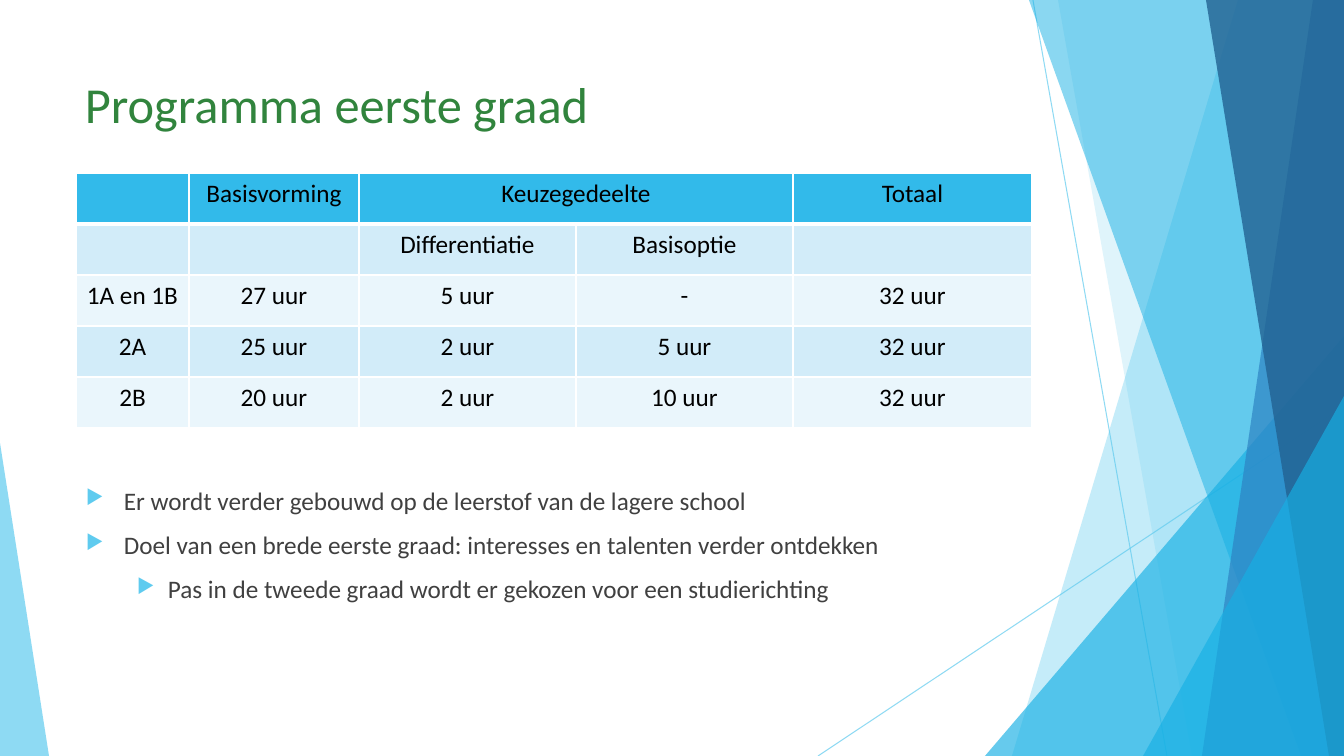
from dataclasses import dataclass

from lxml import etree
from pptx import Presentation
from pptx.dml.color import RGBColor
from pptx.enum.shapes import MSO_CONNECTOR, MSO_SHAPE
from pptx.enum.text import MSO_ANCHOR, PP_ALIGN
from pptx.oxml.ns import qn
from pptx.util import Emu, Pt

STRAIGHT = MSO_CONNECTOR.STRAIGHT
TRIANGLE = MSO_SHAPE.ISOSCELES_TRIANGLE
LEFT, CENTER = PP_ALIGN.LEFT, PP_ALIGN.CENTER
TOP = MSO_ANCHOR.TOP

EMU_PER_PX = 914400 / 100.8
WIDTH, HEIGHT = 1344, 756


@dataclass(frozen=True)
class Theme:
    font: str = "Calibri"
    title_size: int = 36
    text_size: int = 18
    title: str = "31843D"
    body: str = "404040"
    cell: str = "000000"
    sky: str = "5FCBEF"
    cyan: str = "17B0E4"
    blue: str = "2E83C3"
    navy: str = "226292"
    header: str = "32BAEA"
    bands: tuple[str, str] = ("D2ECF9", "EAF6FC")
    border: str = "FFFFFF"


THEME = Theme()


@dataclass(frozen=True)
class Ray:
    start: tuple[int, int]
    end: tuple[int, int]


@dataclass(frozen=True)
class Facet:
    top_left: int
    bottom_left: int
    color: str
    alpha: int


@dataclass(frozen=True)
class Wedge:
    left: int
    top: int
    width: int
    apex: int
    color: str
    alpha: int


@dataclass(frozen=True)
class Bullet:
    text: str
    level: int
    margin: int
    hanging: int


DECOR = [
    Ray((1033, 0), (1167, HEIGHT)),
    Ray((WIDTH, 406), (818, HEIGHT)),
    Facet(1238, 1012, THEME.sky, 36),
    Facet(1058, 1192, THEME.sky, 20),
    Wedge(985, 336, 359, 1, THEME.cyan, 66),
    Facet(1029, 1301, THEME.cyan, 50),
    Facet(1313, 1202, THEME.blue, 70),
    Facet(1206, 1329, THEME.navy, 80),
    Wedge(1143, 396, 201, 1, THEME.cyan, 66),
    Wedge(0, 443, 49, 0, THEME.sky, 70),
]

COLUMN_WIDTHS = [113, 170, 217, 217, 239]
ROW_HEIGHT = 51
HOURS = [
    ["", "Basisvorming", "Keuzegedeelte", "", "Totaal"],
    ["", "", "Differentiatie", "Basisoptie", ""],
    ["1A en 1B", "27 uur", "5 uur", "-", "32 uur"],
    ["2A", "25 uur", "2 uur", "5 uur", "32 uur"],
    ["2B", "20 uur", "2 uur", "10 uur", "32 uur"],
]

BULLETS = [
    Bullet("Er wordt verder gebouwd op de leerstof van de lagere school", 0, 38, 38),
    Bullet("Doel van een brede eerste graad: interesses en talenten verder ontdekken", 0, 38, 38),
    Bullet("Pas in de tweede graad wordt er gekozen voor een studierichting", 1, 82, 31),
]


def px(length: int) -> Emu:
    return Emu(round(length * EMU_PER_PX))


def set_alpha(shape, percent: int) -> None:
    for color in shape.element.spPr.iter(qn("a:srgbClr")):
        etree.SubElement(color, qn("a:alpha"), val=str(percent * 1000))


def write(para, text: str, *, size: int, color: str, align=LEFT) -> None:
    para.alignment = align
    span = para.add_run()
    span.text = text
    span.font.name = THEME.font
    span.font.size = Pt(size)
    span.font.color.rgb = RGBColor.from_string(color)


def add_box(page, left: int, top: int, width: int, height: int):
    box = page.shapes.add_textbox(px(left), px(top), px(width), px(height))
    box.text_frame.word_wrap = True
    box.text_frame.vertical_anchor = TOP
    return box.text_frame


def draw_ray(page, ray: Ray) -> None:
    line = page.shapes.add_connector(
        STRAIGHT, *(px(length) for length in (*ray.start, *ray.end)))
    line.line.color.rgb = RGBColor.from_string(THEME.sky)
    line.line.width = Pt(0.75)
    set_alpha(line, 70)
    etree.SubElement(line.element.spPr, qn("a:effectLst"))


def paint(shape, color: str, alpha: int) -> None:
    shape.shadow.inherit = False
    shape.fill.solid()
    shape.fill.fore_color.rgb = RGBColor.from_string(color)
    shape.line.fill.background()
    set_alpha(shape, alpha)


def draw_facet(page, facet: Facet) -> None:
    outline = page.shapes.build_freeform(facet.top_left, 0, scale=EMU_PER_PX)
    outline.add_line_segments(
        [(WIDTH, 0), (WIDTH, HEIGHT), (facet.bottom_left, HEIGHT)], close=True)
    paint(outline.convert_to_shape(), facet.color, facet.alpha)


def draw_wedge(page, wedge: Wedge) -> None:
    shape = page.shapes.add_shape(
        TRIANGLE, px(wedge.left), px(wedge.top), px(wedge.width), px(HEIGHT - wedge.top))
    shape.adjustments[0] = wedge.apex
    paint(shape, wedge.color, wedge.alpha)


def set_borders(cell, widths: dict[str, int]) -> None:
    properties = cell._tc.get_or_add_tcPr()
    for index, (side, width) in enumerate(widths.items()):
        line = etree.Element(qn(f"a:ln{side}"), w=str(Pt(width)))
        fill = etree.SubElement(line, qn("a:solidFill"))
        etree.SubElement(fill, qn("a:srgbClr"), val=THEME.border)
        properties.insert(index, line)


def draw_table(page) -> None:
    table = page.shapes.add_table(
        len(HOURS), len(COLUMN_WIDTHS), px(76), px(173),
        px(sum(COLUMN_WIDTHS)), px(ROW_HEIGHT * len(HOURS))).table
    table.first_row = table.horz_banding = False
    for column, width in zip(table.columns, COLUMN_WIDTHS):
        column.width = px(width)
    for row_index, texts in enumerate(HOURS):
        table.rows[row_index].height = px(ROW_HEIGHT)
        color = THEME.bands[(row_index - 1) % 2] if row_index else THEME.header
        for column_index, text in enumerate(texts):
            cell = table.cell(row_index, column_index)
            cell.fill.solid()
            cell.fill.fore_color.rgb = RGBColor.from_string(color)
            set_borders(cell, {"L": 1, "R": 1, "T": 3 if row_index == 1 else 1,
                               "B": 3 if row_index == 0 else 1})
            if text:
                write(cell.text_frame.paragraphs[0], text, size=THEME.text_size,
                      color=THEME.cell, align=CENTER)
    table.cell(0, 2).merge(table.cell(0, 3))


def add_bullet(para, bullet: Bullet) -> None:
    para.level = bullet.level
    para.space_before = Pt(10)
    write(para, bullet.text, size=THEME.text_size, color=THEME.body)
    properties = para._p.get_or_add_pPr()
    properties.set("marL", str(px(bullet.margin)))
    properties.set("indent", str(px(-bullet.hanging)))
    color = etree.SubElement(properties, qn("a:buClr"))
    etree.SubElement(color, qn("a:srgbClr"), val=THEME.sky)
    etree.SubElement(properties, qn("a:buSzPct"), val="80000")
    etree.SubElement(properties, qn("a:buChar"), char="▶")


def main() -> None:
    deck = Presentation()
    deck.slide_width, deck.slide_height = px(WIDTH), px(HEIGHT)
    page = deck.slides.add_slide(deck.slide_layouts[6])
    painters = {Ray: draw_ray, Facet: draw_facet, Wedge: draw_wedge}
    for item in DECOR:
        painters[type(item)](page, item)
    title = add_box(page, 75, 68, 948, 145)
    write(title.paragraphs[0], "Programma eerste graad",
          size=THEME.title_size, color=THEME.title)
    draw_table(page)
    body = add_box(page, 76, 480, 958, 178)
    for index, bullet in enumerate(BULLETS):
        add_bullet(body.add_paragraph() if index else body.paragraphs[0], bullet)
    deck.save("out.pptx")


if __name__ == "__main__":
    main()
